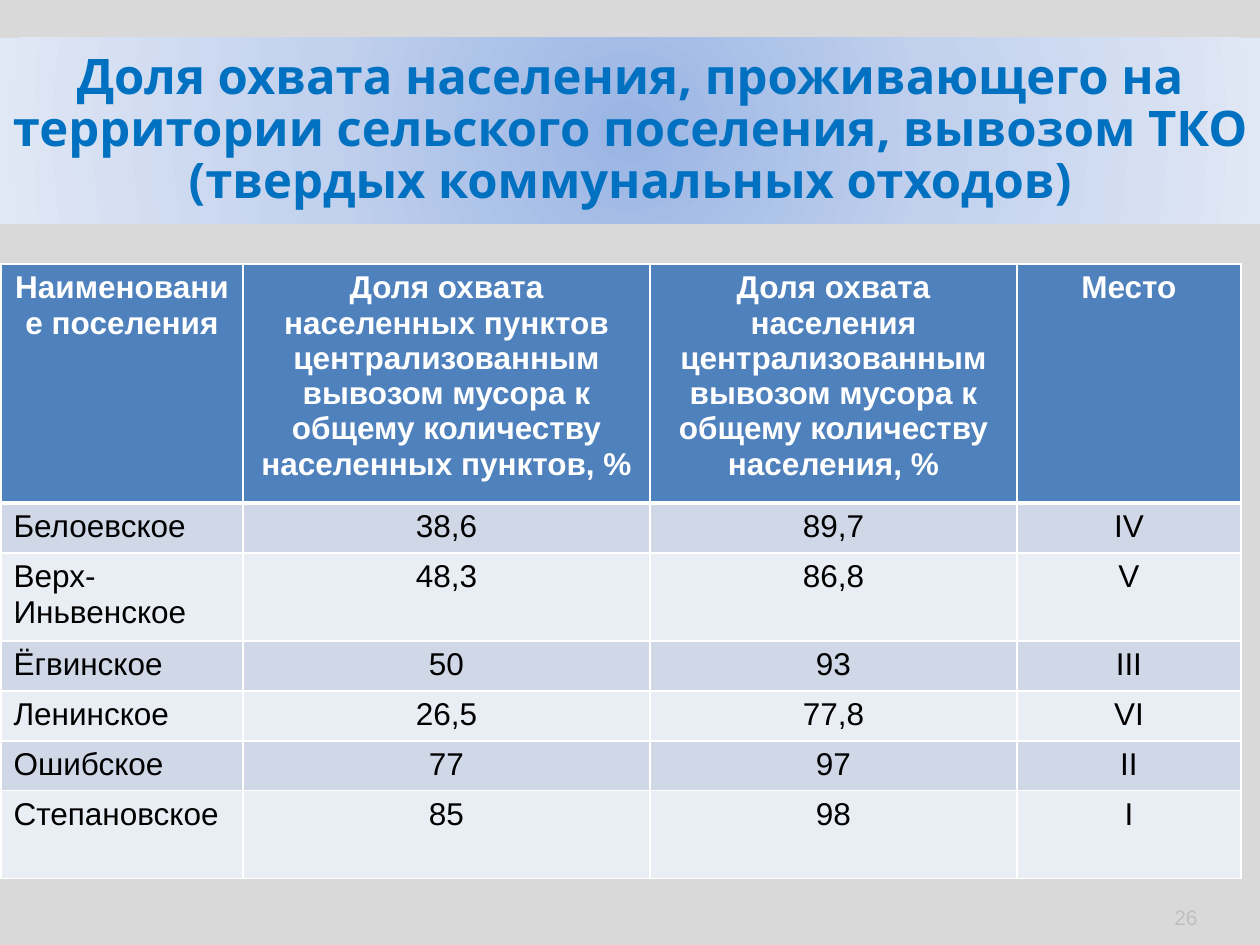
"""Build a slide with a gradient title band and a table of waste collection coverage."""
import pptx
import pptx.util
import pptx.dml.color
import pptx.enum.shapes
import pptx.enum.text
import pptx.oxml
import pptx.oxml.ns
from lxml import etree

TITLE = ("Доля охвата населения, проживающего на территории сельского поселения, "
         "вывозом ТКО (твердых коммунальных отходов)")
PAGE = "26"
HEADS = [
    "Наименование поселения",
    "Доля охвата населенных пунктов централизованным вывозом мусора "
    "к общему количеству населенных пунктов, %",
    "Доля охвата населения централизованным вывозом мусора "
    "к общему количеству населения, %",
    "Место",
]
ROWS = [
    ("Белоевское", "38,6", "89,7", "IV"),
    ("Верх-Иньвенское", "48,3", "86,8", "V"),
    ("Ёгвинское", "50", "93", "III"),
    ("Ленинское", "26,5", "77,8", "VI"),
    ("Ошибское", "77", "97", "II"),
    ("Степановское", "85", "98", "I"),
]
WIDTHS = [242, 407, 367, 224]
HEIGHTS = [239, 50, 88, 50, 50, 50, 88]
THEME = {
    "back": "D9D9D9", "title": "0070C0", "head": "4F81BD", "bands": ("D0D8E8", "E9EDF4"),
    "white": "FFFFFF", "black": "000000", "page": "BFBFBF",
    "stops": ((0, "9AB5E4"), (50, "C2D1ED"), (100, "E1E8F5")),
    "face": "Noto Sans", "body": "Arial",
    "big": 28, "mid": 18, "small": 12, "thin": 1, "thick": 3,
}
ALIGN = pptx.enum.text.PP_ALIGN
NS = pptx.oxml.ns.nsdecls("a")


def px(n):
    return pptx.util.Emu(round(n * 914400 / 126))


def rgb(name):
    return pptx.dml.color.RGBColor.from_string(name)


def write(frame, text, face, size, color, bold=False, align=ALIGN.CENTER):
    frame.word_wrap = True
    par = frame.paragraphs[0]
    par.text, par.alignment = text, align
    font = par.font
    font.name, font.size, font.bold = face, pptx.util.Pt(size), bold
    font.color.rgb = rgb(color)
    return par


def shade(shape):
    stops = "".join(f'<a:gs pos="{at * 1000}"><a:srgbClr val="{color}"/></a:gs>'
                    for at, color in THEME["stops"])
    grad = pptx.oxml.parse_xml(
        f'<a:gradFill {NS} rotWithShape="1"><a:gsLst>{stops}</a:gsLst><a:path path="circle">'
        '<a:fillToRect l="50000" t="50000" r="50000" b="50000"/></a:path></a:gradFill>')
    shape.fill.background()
    old = shape.fill._xPr.find(pptx.oxml.ns.qn("a:noFill"))
    old.getparent().replace(old, grad)


def edge(cell, row):
    props = cell._tc.get_or_add_tcPr()
    thick = {"B": row == 0, "T": row == 1}
    for side in "LRTB":
        size = THEME["thick" if thick.get(side) else "thin"]
        line = etree.SubElement(props, pptx.oxml.ns.qn(f"a:ln{side}"), w=str(size * 12700))
        fill = etree.SubElement(line, pptx.oxml.ns.qn("a:solidFill"))
        etree.SubElement(fill, pptx.oxml.ns.qn("a:srgbClr"), val=THEME["white"])


def add_title(slide):
    band = slide.shapes.add_shape(pptx.enum.shapes.MSO_SHAPE.RECTANGLE,
                                  px(0), px(38), px(1260), px(186))
    band.shadow.inherit = False
    band.line.fill.background()
    shade(band)
    frame = band.text_frame
    frame.margin_left = frame.margin_right = 0
    frame.vertical_anchor = pptx.enum.text.MSO_ANCHOR.MIDDLE
    par = write(frame, TITLE, THEME["face"], THEME["big"], THEME["title"], True)
    par.line_spacing = 0.88


def add_grid(slide):
    data = [HEADS, *ROWS]
    table = slide.shapes.add_table(len(data), len(HEADS), px(1), px(264),
                                   px(sum(WIDTHS)), px(sum(HEIGHTS))).table
    for col, width in zip(table.columns, WIDTHS):
        col.width = px(width)
    for row, height in zip(table.rows, HEIGHTS):
        row.height = px(height)
    for r, line in enumerate(data):
        head = r == 0
        fill = THEME["head"] if head else THEME["bands"][(r - 1) % 2]
        color = THEME["white" if head else "black"]
        for c, text in enumerate(line):
            cell = table.cell(r, c)
            edge(cell, r)
            cell.fill.solid()
            cell.fill.fore_color.rgb = rgb(fill)
            align = ALIGN.CENTER if head or c else ALIGN.LEFT
            write(cell.text_frame, text, THEME["body"], THEME["mid"], color, head, align)


def add_page(slide):
    box = slide.shapes.add_textbox(px(1100), px(899), px(110), px(36))
    box.text_frame.vertical_anchor = pptx.enum.text.MSO_ANCHOR.MIDDLE
    write(box.text_frame, PAGE, THEME["body"], THEME["small"], THEME["page"],
          align=ALIGN.RIGHT)


def main():
    deck = pptx.Presentation()
    deck.slide_width, deck.slide_height = px(1260), px(945)
    slide = deck.slides.add_slide(deck.slide_layouts[6])
    slide.background.fill.solid()
    slide.background.fill.fore_color.rgb = rgb(THEME["back"])
    add_title(slide)
    add_grid(slide)
    add_page(slide)
    deck.save("out.pptx")


if __name__ == "__main__":
    main()
